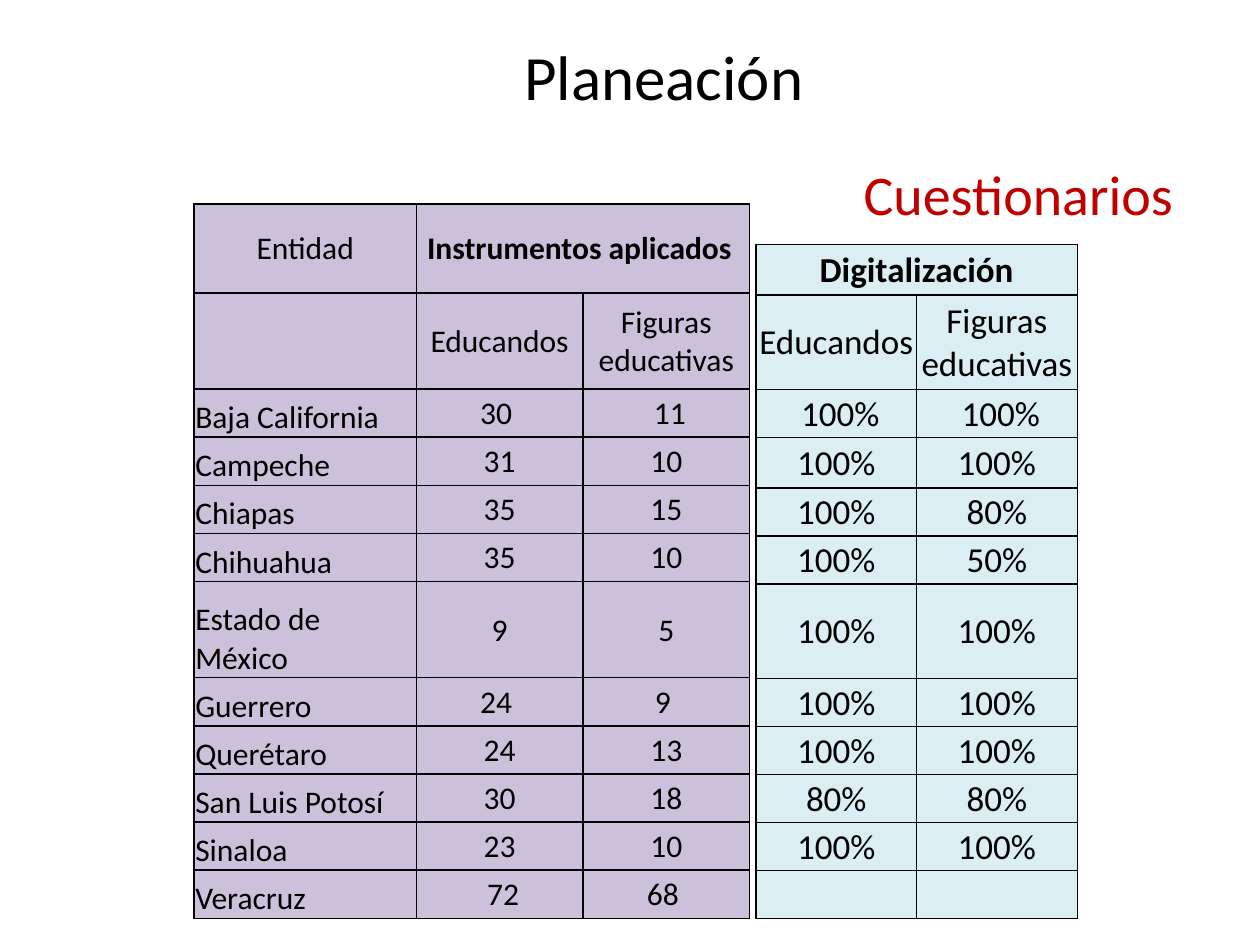
import pptx
import pptx.util
import pptx.dml.color
import pptx.enum.text
import pptx.oxml
import pptx.oxml.ns

Inches, Pt = pptx.util.Inches, pptx.util.Pt
ALIGN = pptx.enum.text.PP_ALIGN
ANCHOR = pptx.enum.text.MSO_ANCHOR

HUES = {"ink": "000000", "red": "C00000", "lilac": "CCC1DA", "sky": "DBEEF4"}
FONT = "Calibri"

APPLIED = [
    ("Entidad", "Instrumentos aplicados ", None),
    ("", "Educandos", "Figuras educativas"),
    ("Baja California", "30 ", " 11"),
    ("Campeche", "31", "10"),
    ("Chiapas", "35", "15"),
    ("Chihuahua", "35", "10"),
    ("Estado de México", "9", "5"),
    ("Guerrero", "24 ", "9 "),
    ("Querétaro", "24", "13"),
    ("San Luis Potosí", "30", "18"),
    ("Sinaloa", "23", "10"),
    ("Veracruz", " 72", "68 "),
]
DIGITAL = [
    ("Digitalización", None),
    ("Educandos", "Figuras educativas"),
    (" 100%", " 100%"),
    ("100%", "100%"),
    ("100%", "80%"),
    ("100%", "50%"),
    ("100%", "100%"),
    ("100%", "100%"),
    ("100%", "100%"),
    ("80%", "80%"),
    ("100%", "100%"),
    ("", ""),
]
# Row and column entries are shares of each table's size.
TABLES = [
    dict(rows=APPLIED, box=(1.54, 1.62, 4.41, 5.67), fill="lilac", size=18,
         wide=(4, 3, 3), base=0.38, tall={0: 0.7, 1: 0.76, 6: 0.76}, names=True),
    dict(rows=DIGITAL, box=(6, 1.94, 2.55, 5.35), fill="sky", size=20,
         wide=(1, 1), base=0.38, tall={0: 0.4, 1: 0.75, 3: 0.4, 6: 0.75}, names=False),
]


def tint(hue):
    return pptx.dml.color.RGBColor.from_string(HUES[hue])


def write(para, text, size, hue="ink", bold=False):
    run = para.add_run()
    run.text = text
    font = run.font
    font.name, font.size, font.bold = FONT, Pt(size), bold
    font.color.rgb = tint(hue)


def place(shape, box):
    shape.left, shape.top, shape.width, shape.height = map(Inches, box)


def border(cell):
    props = cell._tc.get_or_add_tcPr()
    for side in "LRTB":
        props.append(pptx.oxml.parse_xml(
            f'<a:ln{side} {pptx.oxml.ns.nsdecls("a")} w="{Pt(1)}">'
            f'<a:solidFill><a:srgbClr val="{HUES["ink"]}"/></a:solidFill>'
            f'</a:ln{side}>'))


def split(total, parts):
    return [Inches(total * part / sum(parts)) for part in parts]


def grid(slide, rows, box, fill, size, wide, base, tall, names):
    """Add a bordered table whose last heading spans two columns."""
    table = slide.shapes.add_table(len(rows), len(wide), *map(Inches, box)).table
    for col, width in zip(table.columns, split(box[2], wide)):
        col.width = width
    high = [tall.get(i, base) for i in range(len(rows))]
    for row, height in zip(table.rows, split(box[3], high)):
        row.height = height
    for i, row in enumerate(rows):
        for j, text in enumerate(row):
            cell = table.cell(i, j)
            border(cell)
            cell.fill.solid()
            cell.fill.fore_color.rgb = tint(fill)
            cell.margin_left = cell.margin_right = cell.margin_top = Inches(0.01)
            cell.margin_bottom = 0
            label = names and j == 0 and i > 1
            cell.vertical_anchor = ANCHOR.BOTTOM if label else ANCHOR.MIDDLE
            para = cell.text_frame.paragraphs[0]
            para.alignment = ALIGN.LEFT if label else ALIGN.CENTER
            if text:
                write(para, text, size, bold=i == 0 and j == len(wide) - 2)
    end = len(wide) - 1
    table.cell(0, end - 1).merge(table.cell(0, end))


def main():
    deck = pptx.Presentation()
    deck.slide_width, deck.slide_height = Inches(10), Inches(7.5)
    slide = deck.slides.add_slide(deck.slide_layouts[5])

    title = slide.shapes.title
    place(title, (4.06, 0.25, 2.44, 0.71))
    frame = title.text_frame
    frame.word_wrap = False
    frame.auto_size = pptx.enum.text.MSO_AUTO_SIZE.NONE
    frame.vertical_anchor = ANCHOR.TOP
    frame.paragraphs[0].alignment = ALIGN.LEFT
    write(frame.paragraphs[0], "Planeación", 36)

    for spec_row in TABLES:
        grid(slide, **spec_row)

    note = slide.shapes.add_textbox(*map(Inches, (5.71, 1.22, 3.7, 0.64)))
    note.text_frame.word_wrap = True
    para = note.text_frame.paragraphs[0]
    para.alignment = ALIGN.RIGHT
    write(para, "Cuestionarios", 32, "red")

    deck.save("out.pptx")


if __name__ == "__main__":
    main()
